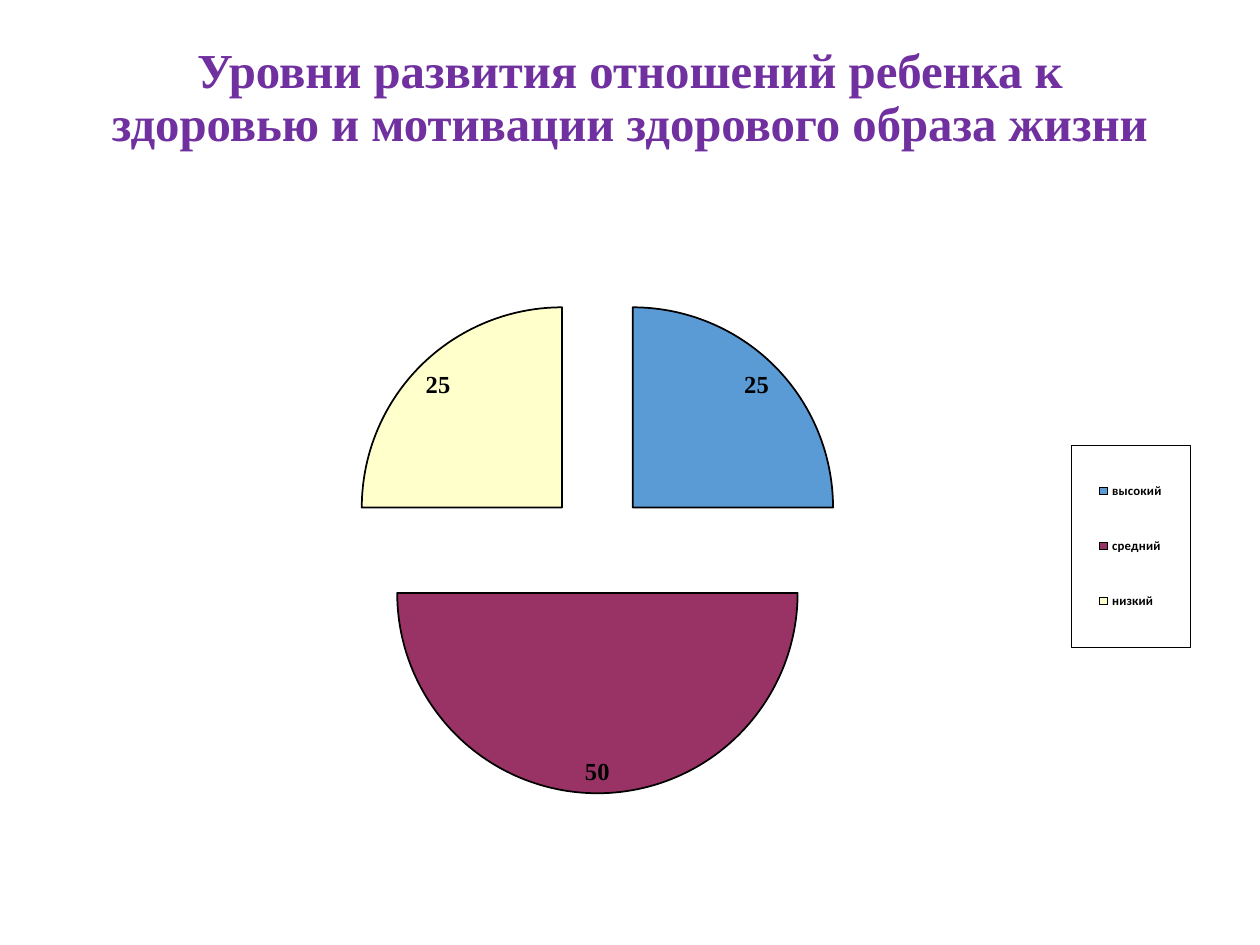
from pptx import Presentation
from pptx import oxml
from pptx import util as u
from pptx.chart import data
from pptx.dml import color
from pptx.enum import chart as ch
from pptx.enum import text
from pptx.oxml import ns

SERIF = "Times New Roman"
LEVELS = ["высокий", "средний", "низкий"]
SERIES = [
    ("Series 1", [25, 50, 25], ["5B9BD5", "993366", "FFFFCC"]),
    ("Series 2", [None] * 3, ["9999FF", "ED7D31", "FFFFCC"]),
    ("Series 3", [None] * 3, ["9999FF", "993366", "A5A5A5"]),
]


def rgb(code):
    """Turn a hex string into a colour."""
    return color.RGBColor.from_string(code)


def set_font(font, name, size, code):
    """Apply a bold typeface with its size and colour."""
    font.name, font.size, font.bold = name, u.Pt(size), True
    font.color.rgb = rgb(code)


def set_outline(line):
    """Draw a thin black outline."""
    line.color.rgb = rgb("000000")
    line.width = u.Pt(1)


def set_layout(parent, index, x, y, w, h, inner=False):
    """Place a chart part by fractions of the chart area."""
    for old in parent.findall(ns.qn("c:layout")):
        parent.remove(old)
    parts = [("layoutTarget", "inner")] if inner else []
    parts += [("xMode", "edge"), ("yMode", "edge"), ("x", x), ("y", y), ("w", w), ("h", h)]
    body = "".join(f'<c:{tag} val="{value}"/>' for tag, value in parts)
    parent.insert(index, oxml.parse_xml(
        f'<c:layout {ns.nsdecls("c")}><c:manualLayout>{body}</c:manualLayout></c:layout>'))


def add_title(page, left, top, width, height):
    """Write the heading in the title placeholder."""
    title = page.shapes.title
    title.left, title.top = u.Inches(left), u.Inches(top)
    title.width, title.height = u.Inches(width), u.Inches(height)
    frame = title.text_frame
    frame.text = "Уровни развития отношений ребенка к здоровью и мотивации здорового образа жизни"
    frame.word_wrap = True
    frame.auto_size = text.MSO_AUTO_SIZE.NONE
    frame.vertical_anchor = text.MSO_ANCHOR.TOP
    frame.margin_top = 0
    para = frame.paragraphs[0]
    para.alignment = text.PP_ALIGN.CENTER
    para.line_spacing = 0.9
    set_font(para.font, SERIF, 27.9, "7030A0")


def format_slices(plot):
    """Colour and outline the slices and label the first series."""
    plot.vary_by_categories = True
    for series, (_, _, fills) in zip(plot.series, SERIES):
        set_outline(series.format.line)
        for index, fill in enumerate(fills):
            look = series.points[index].format
            look.fill.solid()
            look.fill.fore_color.rgb = rgb(fill)
            set_outline(look.line)
    labels = plot.series[0].data_labels
    labels.show_value = True
    labels.number_format, labels.number_format_is_linked = "0", False
    labels.position = ch.XL_LABEL_POSITION.INSIDE_END
    set_font(labels.font, SERIF, 14, "000000")


def add_legend(chart):
    """Add the framed legend on the right."""
    chart.has_legend = True
    legend = chart.legend
    legend.position = ch.XL_LEGEND_POSITION.RIGHT
    legend.include_in_layout = False
    set_font(legend.font, "Calibri", 7.3, "000000")
    node = chart.element.xpath(".//c:legend")[0]
    set_layout(node, 1, 0.88, 0.34, 0.11, 0.32)
    node.find(ns.qn("c:txPr")).addprevious(oxml.parse_xml(
        f'<c:spPr {ns.nsdecls("c", "a")}><a:ln w="3175"><a:solidFill>'
        '<a:srgbClr val="000000"/></a:solidFill></a:ln></c:spPr>'))


def add_pie(page, left, top, width, height):
    """Add the exploded pie of the three levels."""
    values = data.CategoryChartData()
    values.categories = LEVELS
    for name, numbers, _ in SERIES:
        values.add_series(name, numbers)
    chart = page.shapes.add_chart(
        ch.XL_CHART_TYPE.PIE, u.Inches(left), u.Inches(top),
        u.Inches(width), u.Inches(height), values).chart
    plot_area = chart.element.xpath(".//c:plotArea")[0]
    pie = plot_area.xpath("./c:pieChart")[0]
    present = len(pie.xpath("./c:ser"))
    if present < len(SERIES):
        chart.replace_data(values)
    chart.has_title = False
    set_font(chart.font, "Calibri", 8, "000000")
    format_slices(chart.plots[0])
    for look in pie.xpath("./c:ser/c:spPr"):
        look.addnext(oxml.parse_xml(f'<c:explosion {ns.nsdecls("c")} val="25"/>'))
    set_layout(plot_area, 0, 0.1, 0.1, 0.68, 0.79, inner=True)
    add_legend(chart)


def main():
    """Build the slide and save the deck."""
    deck = Presentation()
    deck.slide_width, deck.slide_height = u.Inches(10), u.Inches(7.5)
    page = deck.slides.add_slide(deck.slide_layouts[5])
    add_title(page, 0.69, 0.37, 8.62, 1.45)
    add_pie(page, 0.98, 1.82, 8.55, 5.03)
    deck.save("out.pptx")


if __name__ == "__main__":
    main()
